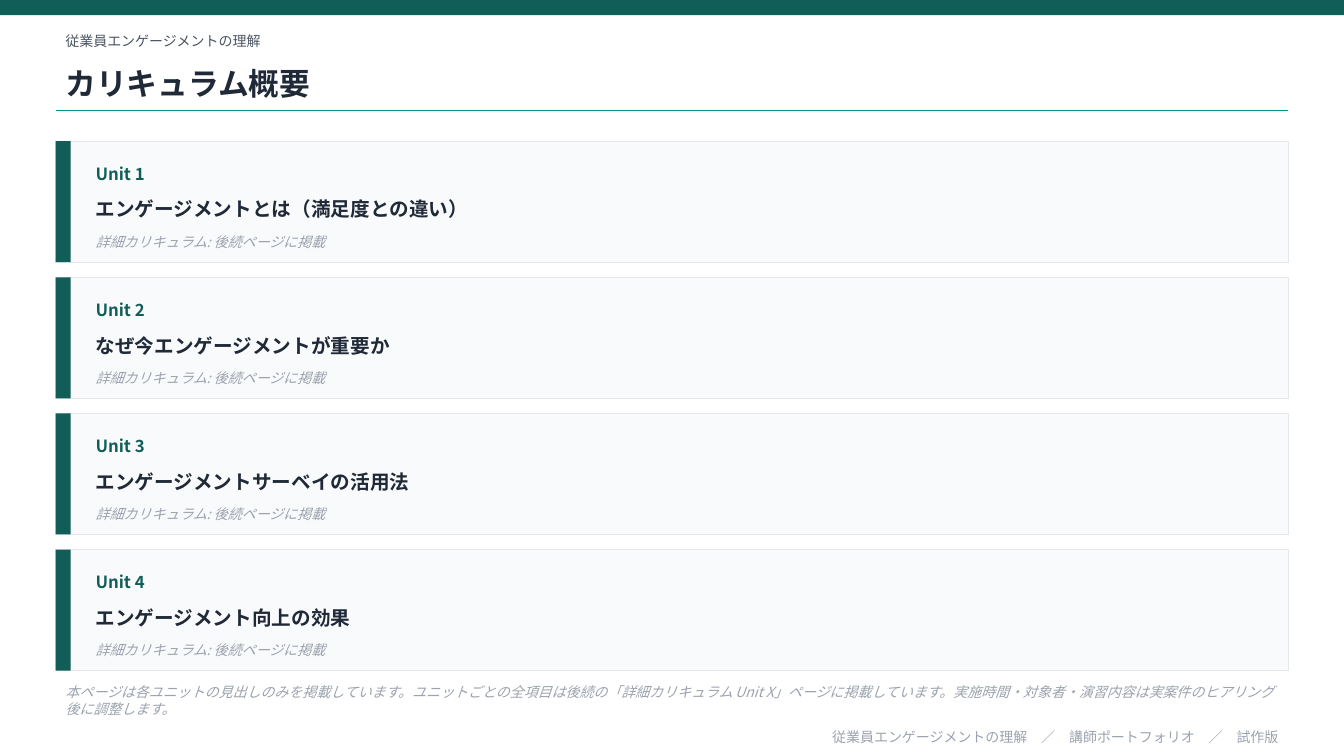
from lxml import etree
from pptx import Presentation
from pptx import util as u
from pptx.dml.color import RGBColor
from pptx.enum import shapes, text
from pptx.oxml.ns import qn

# Content
COURSE = "従業員エンゲージメントの理解"
TITLE = "カリキュラム概要"
UNITS = [
    "エンゲージメントとは（満足度との違い）",
    "なぜ今エンゲージメントが重要か",
    "エンゲージメントサーベイの活用法",
    "エンゲージメント向上の効果",
]
DETAIL = "詳細カリキュラム: 後続ページに掲載"
NOTE = (
    "本ページは各ユニットの見出しのみを掲載しています。"
    "ユニットごとの全項目は後続の「詳細カリキュラム Unit X」ページに掲載しています。"
    "実施時間・対象者・演習内容は実案件のヒアリング後に調整します。"
)
FOOTER = "　／　".join([COURSE, "講師ポートフォリオ", "試作版"])

# Style
FONT = "Noto Sans CJK JP"
GREEN, TEAL, INK, SLATE, GREY = "115E59", "0D9488", "1F2937", "4B5563", "9CA3AF"
PALE, EDGE = "F9FAFB", "E5E7EB"

# Layout in centimetres
WIDE, HIGH = 33.87, 19.05
LEFT, SPAN = 1.4, 31.06
BAR = 0.38
TOP, CARD, GAP = 3.56, 3.05, 0.38
INDENT = 0.76
INNER = SPAN - 2 * INDENT + 0.25

deck = Presentation()
deck.slide_width, deck.slide_height = u.Cm(WIDE), u.Cm(HIGH)
slide = deck.slides.add_slide(deck.slide_layouts[6])


def color(code):
    return RGBColor.from_string(code)


def place(*sizes):
    return [u.Cm(size) for size in sizes]


def rect(x, y, w, h, fill, edge=None):
    box = slide.shapes.add_shape(shapes.MSO_SHAPE.RECTANGLE, *place(x, y, w, h))
    box.shadow.inherit = False
    box.fill.solid()
    box.fill.fore_color.rgb = color(fill)
    if edge:
        box.line.color.rgb = color(edge)
        box.line.width = u.Pt(0.5)
    else:
        box.line.fill.background()


def label(words, x, y, w, h, size, tint, bold=False, italic=False, right=False):
    frame = slide.shapes.add_textbox(*place(x, y, w, h)).text_frame
    frame.word_wrap = True
    frame.vertical_anchor = text.MSO_ANCHOR.MIDDLE
    frame.text = words
    para = frame.paragraphs[0]
    para.alignment = text.PP_ALIGN.RIGHT if right else text.PP_ALIGN.LEFT
    run = para.runs[0]
    font = run.font
    font.name, font.size = FONT, u.Pt(size)
    font.bold, font.italic = bold, italic
    font.color.rgb = color(tint)
    # Japanese glyphs take the East Asian typeface
    etree.SubElement(run._r.get_or_add_rPr(), qn("a:ea")).set("typeface", FONT)


# Header
rect(0, 0, WIDE, BAR, GREEN)
label(COURSE, LEFT, 0.64, SPAN, 0.76, 10, SLATE)
label(TITLE, LEFT, 1.4, SPAN, 1.4, 22, INK, bold=True)
rule = slide.shapes.add_connector(
    shapes.MSO_CONNECTOR.STRAIGHT, *place(LEFT, 2.79, LEFT + SPAN, 2.79))
rule.line.color.rgb = color(TEAL)
rule.line.width = u.Pt(1)
etree.SubElement(rule._element.spPr, qn("a:effectLst"))

# Unit cards
for i, name in enumerate(UNITS):
    y = TOP + i * (CARD + GAP)
    x = LEFT + INDENT
    rect(LEFT, y, SPAN, CARD, PALE, EDGE)
    rect(LEFT, y, BAR, CARD, GREEN)
    label(f"Unit {i + 1}", x, y + 0.3, 3.81, 1.02, 12, GREEN, bold=True)
    label(name, x, y + 1.14, INNER, 1.14, 14, INK, bold=True)
    label(DETAIL, x, y + 2.16, INNER, 0.76, 10, GREY, italic=True)

# Note and footer
label(NOTE, LEFT, 17.15, SPAN, 1.02, 10, GREY, italic=True)
label(FOOTER, LEFT, 18.29, SPAN, 0.56, 10, GREY, right=True)

deck.save("out.pptx")
